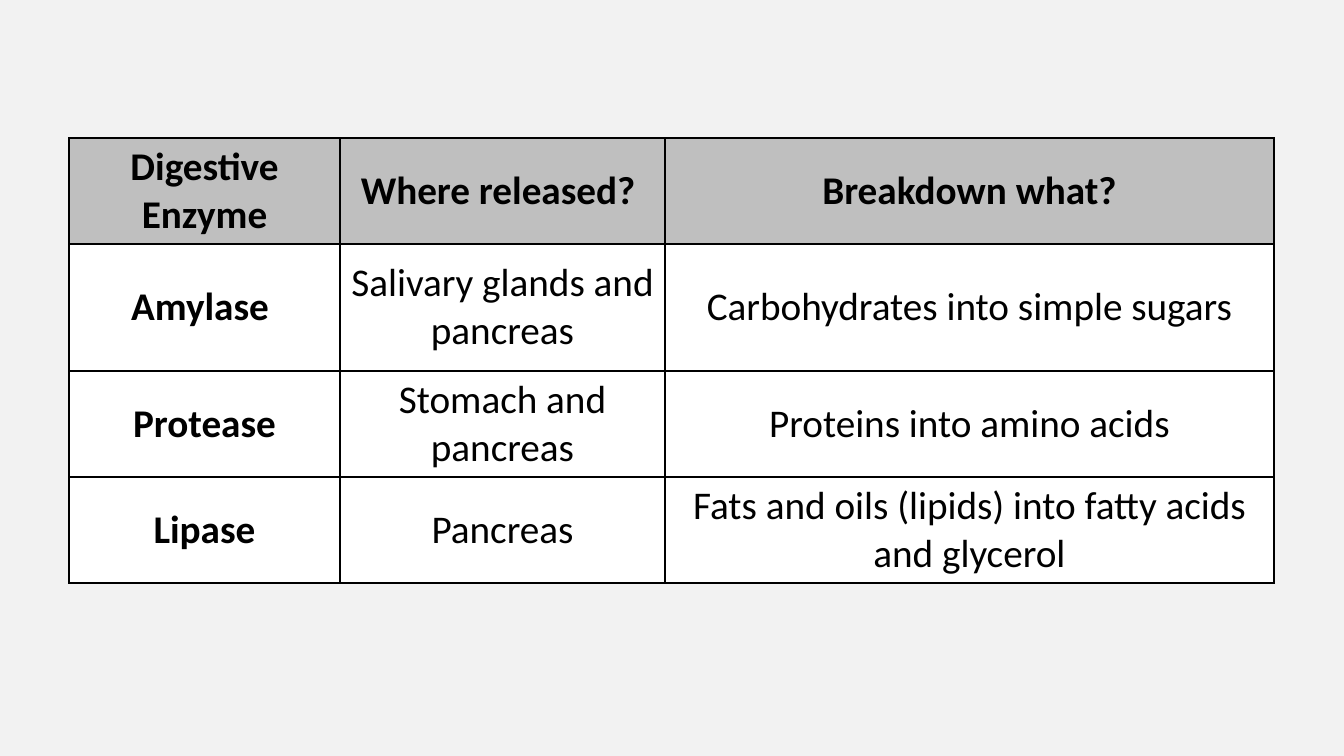
from dataclasses import dataclass

from lxml import etree
from pptx import Presentation
from pptx import util as u
from pptx.dml.color import RGBColor
from pptx.enum import text
from pptx.oxml.ns import qn


@dataclass(frozen=True)
class Theme:
    background: str = "F2F2F2"
    header: str = "BFBFBF"
    body: str = "FFFFFF"
    ink: str = "000000"
    font: str = "Calibri"
    size: int = 28
    border: int = 1


theme = Theme()


def px(count):
    return u.Emu(round(count * 914400 / 100.8))


def add_borders(cell):
    properties = cell._tc.get_or_add_tcPr()
    for index, side in enumerate(("lnL", "lnR", "lnT", "lnB")):
        line = etree.Element(qn(f"a:{side}"), w=str(u.Pt(theme.border)))
        fill = etree.SubElement(line, qn("a:solidFill"))
        etree.SubElement(fill, qn("a:srgbClr"), val=theme.ink)
        properties.insert(index, line)


enzymes = [
    ("Digestive Enzyme", "Where released? ", "Breakdown what?"),
    ("Amylase ", "Salivary glands and pancreas", "Carbohydrates into simple sugars"),
    ("Protease", "Stomach and pancreas", "Proteins into amino acids"),
    ("Lipase", "Pancreas", "Fats and oils (lipids) into fatty acids and glycerol"),
]
widths = [271, 325, 609]
heights = [106, 127, 106, 106]

deck = Presentation()
deck.slide_width, deck.slide_height = px(1344), px(756)
page = deck.slides.add_slide(deck.slide_layouts[6])
page.background.fill.solid()
page.background.fill.fore_color.rgb = RGBColor.from_string(theme.background)

table = page.shapes.add_table(
    len(heights), len(widths), px(69), px(138), px(sum(widths)), px(sum(heights))
).table
table.horz_banding = False
for column, width in zip(table.columns, widths):
    column.width = px(width)
for row, height in zip(table.rows, heights):
    row.height = px(height)

for row_index, enzyme in enumerate(enzymes):
    for column_index, wording in enumerate(enzyme):
        is_header = row_index == 0
        cell = table.cell(row_index, column_index)
        cell.fill.solid()
        cell.fill.fore_color.rgb = RGBColor.from_string(
            theme.header if is_header else theme.body
        )
        cell.vertical_anchor = text.MSO_ANCHOR.MIDDLE
        add_borders(cell)

        para = cell.text_frame.paragraphs[0]
        para.alignment = text.PP_ALIGN.CENTER
        span = para.add_run()
        span.text = wording
        span.font.name = theme.font
        span.font.size = u.Pt(theme.size)
        span.font.bold = is_header or column_index == 0
        span.font.color.rgb = RGBColor.from_string(theme.ink)

deck.save("out.pptx")
